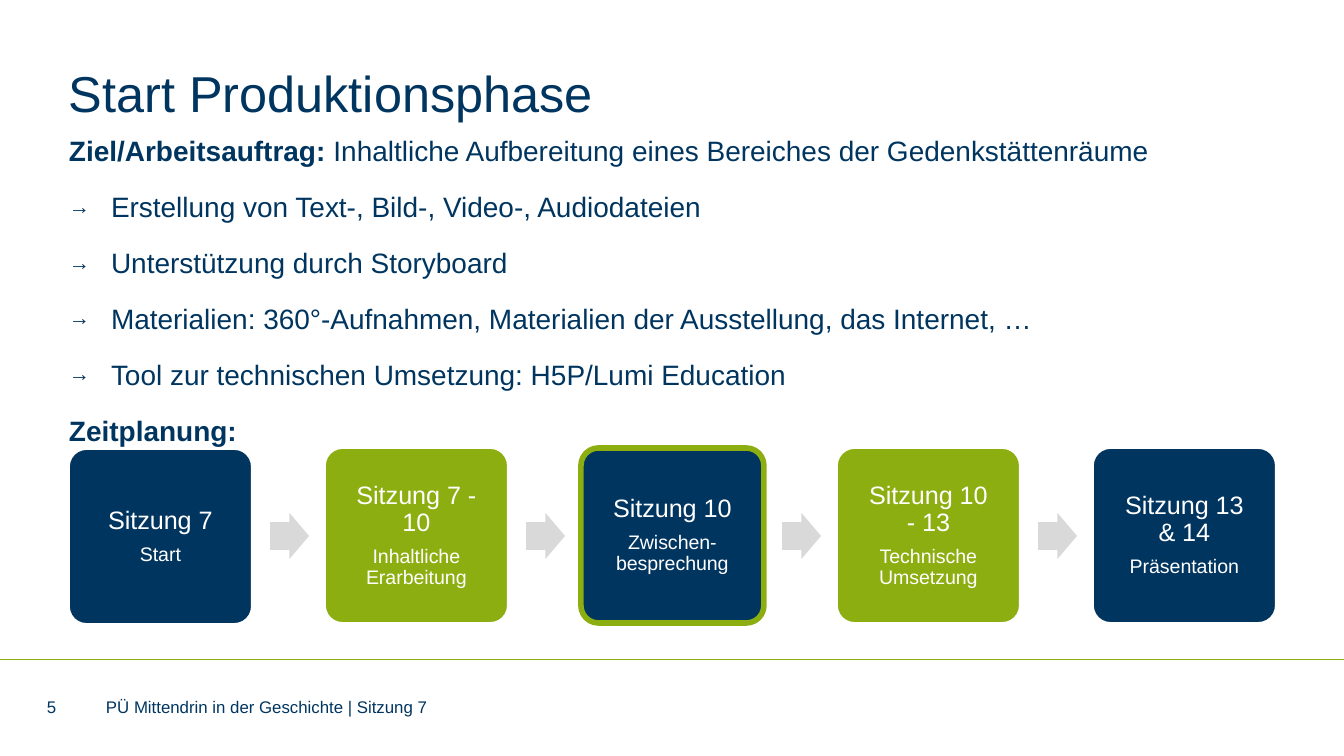
from lxml import etree
from pptx import Presentation
from pptx.dml.color import RGBColor
from pptx.enum.shapes import MSO_CONNECTOR, MSO_SHAPE
from pptx.enum.text import MSO_ANCHOR, PP_ALIGN
from pptx.oxml.ns import qn
from pptx.util import Pt

BOX = MSO_SHAPE.ROUNDED_RECTANGLE
ARROW = MSO_SHAPE.RIGHT_ARROW
LINE = MSO_CONNECTOR.STRAIGHT
MIDDLE = MSO_ANCHOR.MIDDLE
TOP = MSO_ANCHOR.TOP
CENTER = PP_ALIGN.CENTER

NAVY, GREEN, GREY, WHITE = "003560", "8DAE10", "D9D9D9", "FFFFFF"
SCALE = 9144000 / 1344


def px(*nums):
    return [round(n * SCALE) for n in nums]


def color(code):
    return RGBColor.from_string(code)


prs = Presentation()
prs.slide_width, prs.slide_height = px(1344, 756)
slide = prs.slides.add_slide(prs.slide_layouts[6])
shapes = slide.shapes

# Footer rule
rule = shapes.add_connector(LINE, *px(0, 660, 1344, 660))
rule.line.color.rgb = color(GREEN)
rule.line.width = Pt(0.5)
etree.SubElement(rule._element.spPr, qn("a:effectLst"))

# Title, body and footer texts
goal = "Ziel/Arbeitsauftrag: "
tasks = [
    "Erstellung von Text-, Bild-, Video-, Audiodateien",
    "Unterstützung durch Storyboard",
    "Materialien: 360°-Aufnahmen, Materialien der Ausstellung, das Internet, …",
    "Tool zur technischen Umsetzung: H5P/Lumi Education",
]
body = [goal, *tasks, "Zeitplanung:"]
texts = [
    ((69, 58, 1111, 68), ["Start Produktionsphase"], 27, MIDDLE),
    ((69, 134, 1111, 495), body, 15, TOP),
    ((47, 699, 38, 16), ["5"], 9, MIDDLE),
    ((106, 699, 809, 16), ["PÜ Mittendrin in der Geschichte | Sitzung 7"], 9, MIDDLE),
]
for place, lines, size, anchor in texts:
    frame = shapes.add_textbox(*px(*place)).text_frame
    frame.word_wrap = True
    frame.vertical_anchor = anchor
    frame.margin_left = frame.margin_right = 0
    frame.margin_top = frame.margin_bottom = 0
    frame.text = "\n".join(lines)
    for para in frame.paragraphs:
        if lines is body:
            para.line_spacing = Pt(18)
            para.space_after = Pt(12)
            if para.text in tasks:
                props = para._p.get_or_add_pPr()
                indent = px(42)[0]
                props.set("marL", str(indent))
                props.set("indent", str(-indent))
                etree.SubElement(props, qn("a:buSzPct"), val="75000")
                etree.SubElement(props, qn("a:buFont"), typeface="Arial")
                etree.SubElement(props, qn("a:buChar"), char="→")
            else:
                para.runs[0].font.bold = True
            if para.text == goal:
                para.add_run().text = "Inhaltliche Aufbereitung eines Bereiches der Gedenkstättenräume"
        for run in para.runs:
            run.font.name = "Arial"
            run.font.size = Pt(size)
            run.font.color.rgb = color(NAVY)

# Timeline: fill, border, border width, session, topic
steps = [
    (NAVY, WHITE, 1, "Sitzung 7", "Start"),
    (GREEN, WHITE, 1, "Sitzung 7 - 10", "Inhaltliche Erarbeitung"),
    (NAVY, GREEN, 3, "Sitzung 10", "Zwischen-besprechung"),
    (GREEN, WHITE, 1, "Sitzung 10 - 13", "Technische Umsetzung"),
    (NAVY, WHITE, 1, "Sitzung 13 & 14", "Präsentation"),
]
STEP = 256
for i, (fill, edge, width, *words) in enumerate(steps):
    top = 449 if i == 0 else 448
    box = shapes.add_shape(BOX, *px(69 + i * STEP, top, 183, 175))
    box.adjustments[0] = 0.1
    box.shadow.inherit = False
    box.fill.solid()
    box.fill.fore_color.rgb = color(fill)
    box.line.color.rgb = color(edge)
    box.line.width = Pt(width)

    frame = box.text_frame
    frame.word_wrap = True
    frame.vertical_anchor = MIDDLE
    frame.margin_left = frame.margin_right = px(20)[0]
    frame.margin_top = frame.margin_bottom = px(20)[0]
    frame.text = "\n".join(words)
    for para, size in zip(frame.paragraphs, (13.5, 10.5)):
        para.alignment = CENTER
        para.line_spacing = 0.9
        para.space_after = Pt(5)
        font = para.runs[0].font
        font.name = "Arial"
        font.size = Pt(size)
        font.color.rgb = color(WHITE)

    if i < len(steps) - 1:
        arrow = shapes.add_shape(ARROW, *px(270 + i * STEP, 513, 39, 46))
        arrow.adjustments[0] = 0.6
        arrow.adjustments[1] = 0.5
        arrow.shadow.inherit = False
        arrow.fill.solid()
        arrow.fill.fore_color.rgb = color(GREY)
        arrow.line.fill.background()

prs.save("out.pptx")
